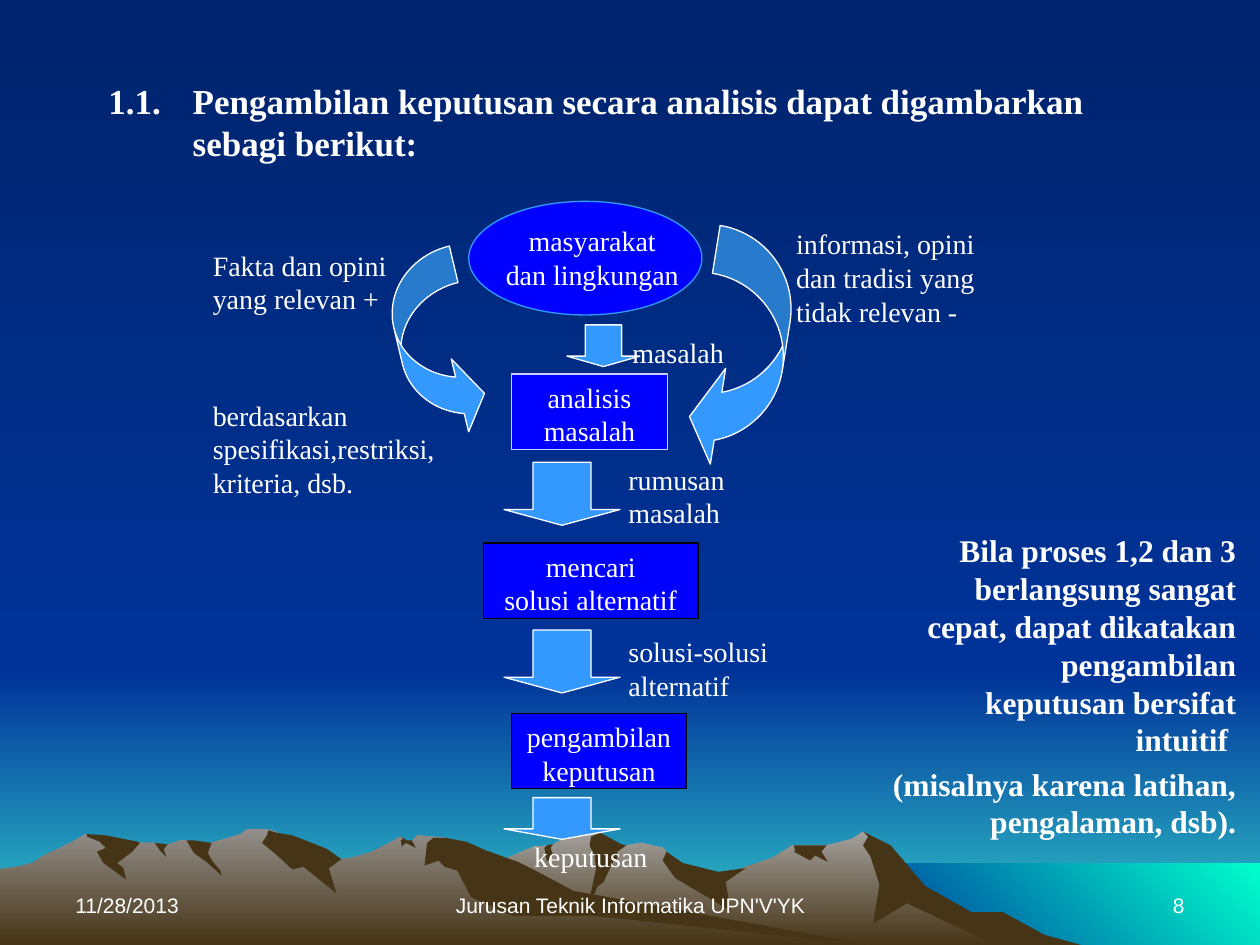
from pptx import Presentation
from pptx.dml.color import RGBColor
from pptx.enum.shapes import MSO_SHAPE as SHAPE
from pptx.enum.text import MSO_ANCHOR as ANCHOR, PP_ALIGN as ALIGN
from pptx.util import Cm, Pt

COLORS = {
    "navy": "00246D", "blue": "003399", "teal": "33CCCC", "mint": "00FFCC",
    "stone": "A5A29F", "rock": "938F8B", "soil": "463416",
    "box": "0000FF", "arrow": "3399FF", "lilac": "CCCCFF",
    "white": "FFFFFF", "black": "000000",
}
SERIF, SANS = "Times New Roman", "Arial"
INDENT = 1.7
HUNDREDTH_INCH = Cm(2.54) / 100

TITLE = "1.1. \tPengambilan keputusan secara analisis dapat digambarkan sebagi berikut:"
REMARK = [
    "\tBila proses 1,2 dan 3 berlangsung sangat cepat, dapat dikatakan pengambilan keputusan bersifat intuitif ",
    "(misalnya karena latihan, pengalaman, dsb).",
]
FOOTERS = [
    ("11/28/2013", 1.27, 5.92, ALIGN.LEFT),
    ("Jurusan Teknik Informatika UPN'V'YK", 8.69, 8.05, ALIGN.CENTER),
    ("8", 18.21, 5.92, ALIGN.RIGHT),
]
LABELS = [
    (["Fakta dan opini yang relevan +"], (4.04, 4.88, 4.32, 1.52)),
    (["informasi, opini", "dan tradisi yang", "tidak relevan -"], (15.8, 4.45, 4.7, 2.29)),
    (["berdasarkan", "spesifikasi,restriksi,", "kriteria, dsb."], (4.04, 7.9, 5.11, 2.29)),
    (["masalah"], (12.5, 6.63, 3, 1.14)),
    (["rumusan", "masalah"], (12.42, 9.19, 2.74, 1.9)),
    (["solusi-solusi", "alternatif"], (12.42, 12.67, 3.53, 1.52)),
    (["keputusan"], (10.52, 16.79, 3.12, 1.14)),
]
SOURCE = ["masyarakat", "dan lingkungan"]
STEPS = [
    (["analisis", "masalah"], (10.31, 7.54, 3.15, 1.52), "lilac"),
    (["mencari", "solusi alternatif"], (9.75, 10.95, 4.32, 1.52), "black"),
    (["pengambilan ", "keputusan"], (10.31, 14.38, 3.53, 1.52), "black"),
]
ARROWS = [
    (SHAPE.CURVED_LEFT_ARROW, (14.12, 4.65, 1.7, 4.88), 9.1, (0.575, 1.15, 0.333)),
    (SHAPE.CURVED_RIGHT_ARROW, (8.05, 5.08, 1.47, 3.81), 346.6, (0.514, 1.029, 0.333)),
    (SHAPE.DOWN_ARROW, (11.43, 6.55, 1.47, 0.84), 0, (0.5, 0.25)),
    (SHAPE.DOWN_ARROW, (10.16, 9.32, 2.34, 1.27), 0, (0.5, 0.25)),
    (SHAPE.DOWN_ARROW, (10.16, 12.7, 2.34, 1.27), 0, (0.5, 0.25)),
    (SHAPE.DOWN_ARROW, (10.16, 16.08, 2.34, 0.84), 0, (0.5, 0.25)),
]
SCENERY = [
    ((0, 13.54, 25.4, 5.51), ("blue", "teal", 270)),
    ((0, 0, 25.4, 13.54), ("navy", "blue", 270)),
    ((17.35, 17.4, 8.05, 1.65), ("blue", "mint", 45)),
]
RIGHT_RIDGE = [
    (802, 740), (778, 727), (764, 723), (723, 698), (702, 671), (685, 660), (676, 666),
    (656, 671), (629, 671), (613, 681), (566, 697), (536, 690), (529, 676), (526, 673),
    (509, 669), (486, 673), (474, 661), (471, 658), (465, 658), (450, 664), (438, 671),
    (424, 672), (412, 677), (399, 683), (355, 698), (327, 709), (277, 739), (258, 750), (820, 750),
]
LEFT_RIDGE = [
    (690, 750), (667, 748), (432, 712), (354, 665), (331, 663), (327, 668), (323, 668),
    (318, 664), (296, 676), (279, 681), (271, 682), (260, 676), (236, 681), (223, 663),
    (219, 660), (212, 658), (196, 658), (191, 662), (178, 666), (160, 671), (148, 667),
    (143, 667), (132, 671), (123, 669), (111, 669), (94, 671), (68, 662), (56, 669),
    (46, 674), (35, 679), (26, 685), (14, 688), (0, 690), (0, 750),
]
RIGHT_SHADOWS = [
    [(796, 724), (771, 724), (734, 703), (707, 671), (685, 660), (689, 664), (685, 671), (691, 680),
     (698, 702), (693, 733), (720, 717), (790, 750), (858, 750), (829, 742)],
    [(471, 658), (474, 662), (469, 664), (468, 671), (472, 680), (473, 690), (465, 727), (474, 704),
     (479, 700), (487, 683), (490, 682), (490, 676), (497, 671), (493, 670)],
    [(529, 676), (526, 683), (536, 697), (580, 723), (576, 700), (592, 689), (570, 692), (542, 685)],
    [(650, 671), (630, 671), (631, 675), (630, 676), (643, 683), (647, 679), (657, 684), (652, 676),
     (656, 671)],
    [(433, 677), (432, 673), (434, 671), (439, 670), (437, 673), (439, 679), (434, 684)],
]
LEFT_SHADOWS = [
    [(212, 663), (208, 669), (219, 678), (232, 690), (241, 688), (267, 709), (261, 689), (271, 682),
     (260, 674), (245, 668), (232, 663), (220, 661), (213, 659)],
    [(370, 668), (354, 665), (344, 665), (339, 669), (337, 687), (348, 683), (353, 688), (363, 691),
     (374, 712), (407, 727), (472, 727), (690, 750), (455, 707), (427, 692), (411, 684), (386, 675)],
    [(318, 667), (320, 666), (318, 664), (323, 667), (327, 667), (330, 673), (322, 669), (319, 672)],
    [(154, 667), (168, 669), (165, 677), (169, 684), (175, 691), (176, 695), (165, 685), (154, 677),
     (148, 667)],
    [(133, 670), (130, 674), (132, 680), (127, 675), (123, 669)],
    [(109, 668), (111, 669), (105, 676), (93, 685), (98, 689), (100, 698), (82, 685), (77, 676),
     (84, 673), (79, 668), (69, 664), (69, 662), (84, 663), (94, 665)],
]


def rgb(name):
    return RGBColor.from_string(COLORS[name])


def paint(fill, color):
    if isinstance(color, str):
        fill.solid()
        fill.fore_color.rgb = rgb(color)
        return
    *ends, angle = color
    fill.gradient()
    fill.gradient_angle = angle
    for stop, name, position in zip(fill.gradient_stops, ends, (0, 1)):
        stop.color.rgb = rgb(name)
        stop.position = position


def style(sp, fill, line=None):
    sp.shadow.inherit = False
    paint(sp.fill, fill)
    if line:
        sp.line.color.rgb = rgb(line)
        sp.line.width = Pt(0.75)
    else:
        sp.line.fill.background()


def add_shape(s, kind, box, fill, line=None):
    sp = s.shapes.add_shape(kind, *map(Cm, box))
    style(sp, fill, line)
    return sp


def add_outline(s, points, fill):
    builder = s.shapes.build_freeform(*points[0], scale=HUNDREDTH_INCH)
    builder.add_line_segments(points[1:], close=True)
    style(builder.convert_to_shape(), fill)


def write(sp, lines, size=16, font=SERIF, bold=False, align=ALIGN.LEFT, anchor=ANCHOR.TOP, hanging=False):
    tf = sp.text_frame
    tf.word_wrap = True
    tf.vertical_anchor = anchor
    for i, line in enumerate(lines):
        p = tf.add_paragraph() if i else tf.paragraphs[0]
        p.alignment = align
        if hanging:
            p.space_before = Pt(size * 0.2)
            pPr = p._p.get_or_add_pPr()
            pPr.set("marL", str(Cm(INDENT)))
            pPr.set("indent", str(-Cm(INDENT)))
        r = p.add_run()
        r.text = line
        r.font.name, r.font.size, r.font.bold = font, Pt(size), bold
        r.font.color.rgb = rgb("white")


def add_text(s, lines, box, **fmt):
    write(s.shapes.add_textbox(*map(Cm, box)), lines, **fmt)


def main():
    """Build the decision-making flow slide."""
    prs = Presentation()
    prs.slide_width, prs.slide_height = Cm(25.4), Cm(19.05)
    s = prs.slides.add_slide(prs.slide_layouts[5])
    paint(s.background.fill, ("navy", "blue", 270))
    for box, fill in SCENERY:
        add_shape(s, SHAPE.RECTANGLE, box, fill)
    for ridge, top, shadows in ((RIGHT_RIDGE, "stone", RIGHT_SHADOWS), (LEFT_RIDGE, "rock", LEFT_SHADOWS)):
        add_outline(s, ridge, (top, "soil", 270))
        for points in shadows:
            add_outline(s, points, "soil")
    for text, x, w, align in FOOTERS:
        add_text(s, [text], (x, 17.35, w, 1.27), size=12, font=SANS, align=align, anchor=ANCHOR.BOTTOM)

    title = s.shapes.title
    s.shapes._spTree.append(title._element)
    title.left, title.top, title.width, title.height = map(Cm, (1.93, 1.47, 21.39, 2.06))
    write(title, [TITLE], size=20, bold=True, hanging=True)

    for lines, box in LABELS:
        add_text(s, lines, box)
    add_shape(s, SHAPE.OVAL, (9.45, 4.06, 4.7, 2.29), "box", "arrow")
    add_text(s, SOURCE, (9.78, 4.39, 4.32, 1.52), align=ALIGN.CENTER)
    for lines, box, line in STEPS:
        write(add_shape(s, SHAPE.RECTANGLE, box, "box", line), lines, align=ALIGN.CENTER)
    add_text(s, REMARK, (16.71, 10.59, 8.46, 8.13), size=18, bold=True, align=ALIGN.RIGHT, hanging=True)
    for kind, box, angle, adjustments in ARROWS:
        sp = add_shape(s, kind, box, "arrow", "white")
        sp.rotation = angle
        for i, value in enumerate(adjustments):
            sp.adjustments[i] = value
    prs.save("out.pptx")


if __name__ == "__main__":
    main()
